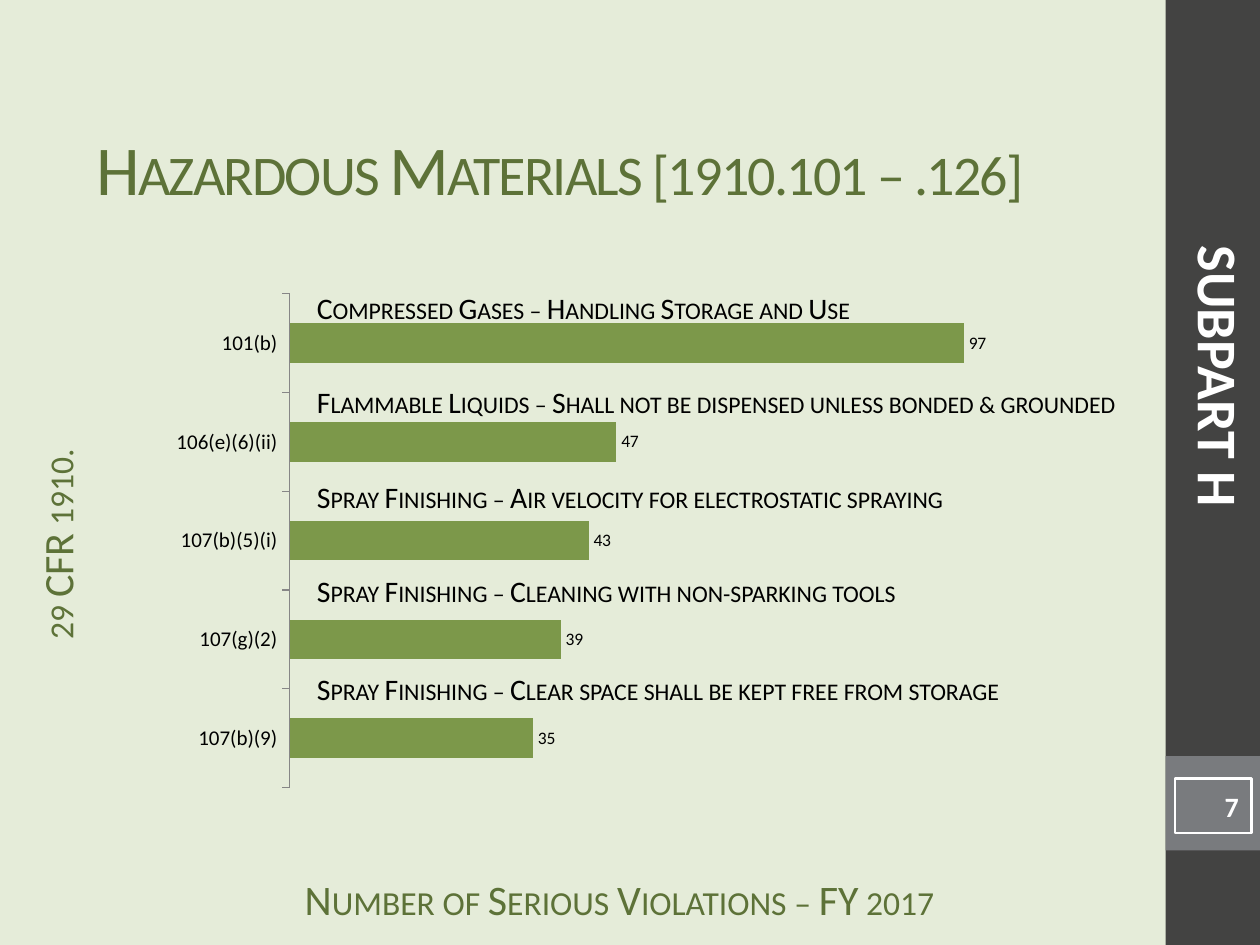
from lxml import etree
from pptx import Presentation
from pptx.chart.data import CategoryChartData
from pptx.dml.color import RGBColor
from pptx.enum.chart import XL_CHART_TYPE as CHART, XL_LABEL_POSITION as LABEL, XL_TICK_MARK as TICK
from pptx.enum.shapes import MSO_SHAPE as SHAPE
from pptx.enum.text import MSO_ANCHOR as ANCHOR, MSO_AUTO_SIZE as AUTO, PP_ALIGN as ALIGN
from pptx.oxml.ns import qn
from pptx.util import Pt

FONT = "Calibri"
COLORS = {
    "background": "E5ECD9",
    "sidebar": "434342",
    "number_band": "797B7E",
    "heading": "5D7238",
    "bar": "7C984A",
    "axis": "868686",
    "black": "000000",
    "white": "FFFFFF",
}
VIOLATIONS = [
    ("107(b)(9)", 35),
    ("107(g)(2)", 39),
    ("107(b)(5)(i)", 43),
    ("106(e)(6)(ii)", 47),
    ("101(b)", 97),
]
# Top of each bar caption and its wording
CAPTIONS = [
    (162, "Compressed Gases – Handling Storage and Use"),
    (216, "Flammable Liquids – Shall not be dispensed unless bonded & grounded"),
    (270, "Spray Finishing – Air velocity for electrostatic spraying"),
    (324, "Spray Finishing – Cleaning with non-sparking tools"),
    (380, "Spray Finishing – Clear space shall be kept free from storage"),
]


def rgb(name):
    return RGBColor.from_string(COLORS[name])


def place(sp, left, top, width, height):
    sp.left, sp.top, sp.width, sp.height = map(Pt, (left, top, width, height))


def write(tf, text, size, color, align=ALIGN.LEFT, bold=False, small_caps=False, spacing=0):
    p = tf.paragraphs[0]
    p.text = text
    p.alignment = align
    font = p.font
    font.name, font.size, font.bold = FONT, Pt(size), bold
    font.color.rgb = rgb(color)
    props = p._p.get_or_add_pPr().get_or_add_defRPr()
    if small_caps:
        props.set("cap", "small")
    if spacing:
        props.set("spc", str(spacing * 100))


def add_text(slide, box, text, size, color, rotation=0, top_inset=3.6, wrap=True, **style):
    sp = slide.shapes.add_textbox(*map(Pt, box))
    sp.rotation = rotation
    tf = sp.text_frame
    tf.word_wrap = wrap
    tf.margin_top = Pt(top_inset)
    write(tf, text, size, color, **style)


def add_rect(slide, box, fill=None, line=None):
    sp = slide.shapes.add_shape(SHAPE.RECTANGLE, *map(Pt, box))
    sp.shadow.inherit = False
    if fill:
        sp.fill.solid()
        sp.fill.fore_color.rgb = rgb(fill)
    else:
        sp.fill.background()
    if line:
        sp.line.color.rgb = rgb(line)
        sp.line.width = Pt(1.5)
    else:
        sp.line.fill.background()
    return sp


def set_title(slide, text):
    title = slide.shapes.title
    place(title, 48, 42, 616, 108)
    tf = title.text_frame
    tf.auto_size = AUTO.NONE
    tf.vertical_anchor = ANCHOR.MIDDLE
    write(tf, text, 40, "heading", small_caps=True, spacing=-1)


def set_plot_area(chart, **fractions):
    """Fix the inner plot area as fractions of the chart frame."""
    plot_area = chart._chartSpace.chart.plotArea
    for old in plot_area.findall(qn("c:layout")):
        plot_area.remove(old)
    layout = etree.Element(qn("c:layout"))
    plot_area.insert(0, layout)
    manual = etree.SubElement(layout, qn("c:manualLayout"))
    settings = {"layoutTarget": "inner", "xMode": "edge", "yMode": "edge", **fractions}
    for name, value in settings.items():
        etree.SubElement(manual, qn(f"c:{name}")).set("val", str(value))


def add_violations_chart(slide, box):
    data = CategoryChartData()
    data.categories = [name for name, _ in VIOLATIONS]
    data.add_series("Series 1", [count for _, count in VIOLATIONS])
    chart = slide.shapes.add_chart(CHART.BAR_CLUSTERED, *map(Pt, box), data).chart
    chart.has_legend = chart.has_title = False
    chart.font.name, chart.font.size = FONT, Pt(10)
    chart.font.color.rgb = rgb("black")
    set_plot_area(chart, x=0.134, y=0.02, w=0.845, h=0.96)

    counts = chart.value_axis
    counts.visible = counts.has_major_gridlines = False
    counts.minimum_scale, counts.maximum_scale = 0, 120

    rules = chart.category_axis
    rules.major_tick_mark = TICK.OUTSIDE
    rules.tick_labels.font.size = Pt(12)
    rules.format.line.color.rgb = rgb("axis")

    plot = chart.plots[0]
    plot.gap_width = 150
    plot.vary_by_categories = False
    fill = plot.series[0].format.fill
    fill.solid()
    fill.fore_color.rgb = rgb("bar")
    plot.has_data_labels = True
    plot.data_labels.show_value = True
    plot.data_labels.position = LABEL.OUTSIDE_END


def main():
    prs = Presentation()
    prs.slide_width, prs.slide_height = Pt(720), Pt(540)
    slide = prs.slides.add_slide(prs.slide_layouts[5])
    slide.background.fill.solid()
    slide.background.fill.fore_color.rgb = rgb("background")

    add_rect(slide, (666, 0, 54, 540), fill="sidebar")
    add_rect(slide, (666, 432, 54, 54), fill="number_band")
    axis_title = dict(size=24, color="heading", top_inset=0, align=ALIGN.CENTER, small_caps=True)
    add_text(slide, (150, 499, 408, 24), "Number of Serious Violations – FY 2017", **axis_title)
    add_text(slide, (-112, 290, 302, 42), "29 CFR 1910.", rotation=270, **axis_title)
    set_title(slide, "Hazardous Materials [1910.101 – .126]")

    number = add_rect(slide, (671.5, 445, 43.5, 31), line="white")
    write(number.text_frame, "7", 16, "white", align=ALIGN.RIGHT, bold=True)

    add_violations_chart(slide, (90, 162, 564, 294))
    for top, caption in CAPTIONS:
        add_text(slide, (174, top, 488, 28), caption, 17, "black", wrap=False, small_caps=True)
    add_text(slide, (481.5, 192, 431, 46), "SUBPART H", 32, "white", rotation=90,
             align=ALIGN.CENTER, bold=True)

    prs.save("out.pptx")


if __name__ == "__main__":
    main()
